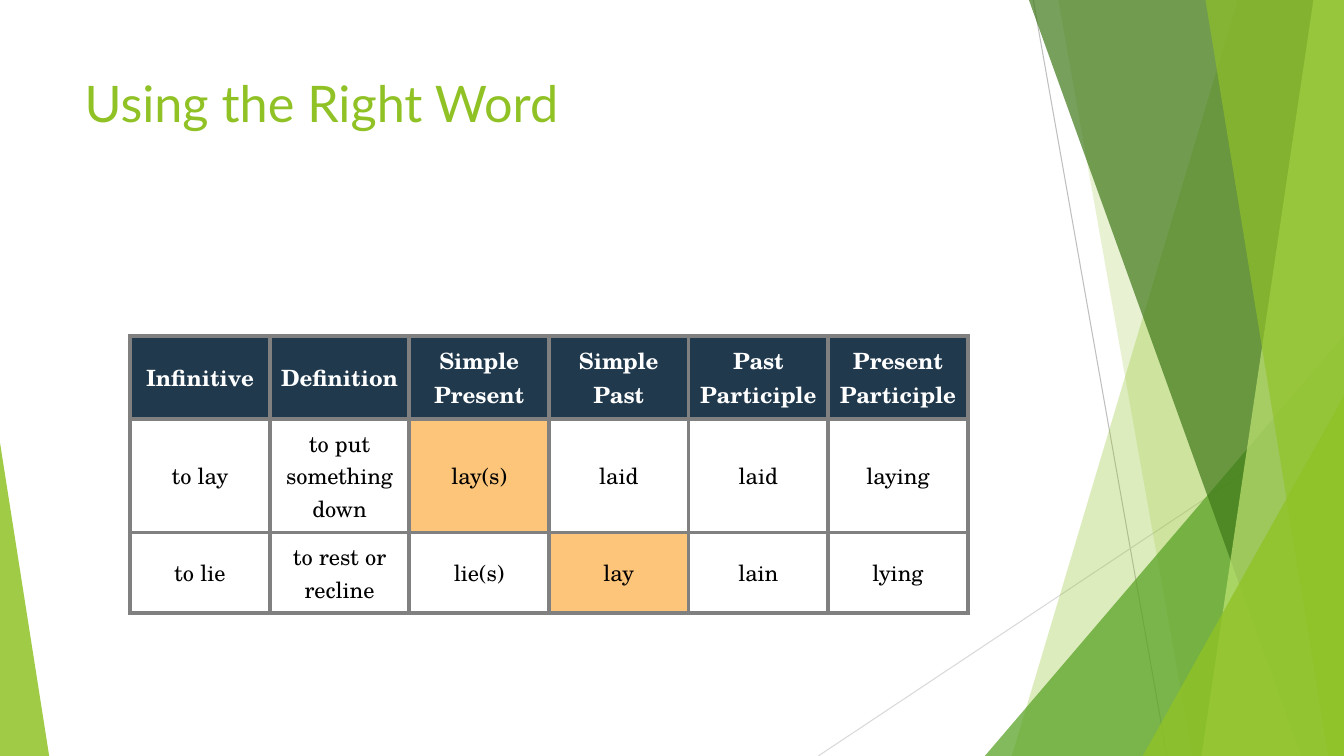
"""Build the slide on lay and lie: a verb table beside green slanted panels."""
from lxml.etree import SubElement
from pptx import Presentation
from pptx.dml.color import RGBColor
from pptx.enum.shapes import MSO_CONNECTOR, MSO_SHAPE
from pptx.enum.text import MSO_ANCHOR, PP_ALIGN
from pptx.oxml.ns import qn
from pptx.util import Cm, Pt

COLORS = {
    "lime": "90C226", "green": "54A021", "forest": "3F7819", "pale": "C0E474",
    "silver": "BFBFBF", "mist": "D9D9D9", "border": "808080", "navy": "20394D",
    "orange": "FDC57A", "white": "FFFFFF", "black": "000000",
}
WIDTH, HEIGHT = 33.87, 19.05


def write(frame, text, font, size, color, bold=False, align=PP_ALIGN.LEFT, anchor=MSO_ANCHOR.TOP):
    frame.word_wrap = True
    frame.vertical_anchor = anchor
    paragraph = frame.paragraphs[0]
    paragraph.alignment = align
    run = paragraph.add_run()
    run.text = text
    run.font.name, run.font.size, run.font.bold = font, Pt(size), bold
    run.font.color.rgb = RGBColor.from_string(COLORS[color])


def tint(panel, color, opacity):
    panel.shadow.inherit = False
    panel.line.fill.background()
    panel.fill.solid()
    panel.fill.fore_color.rgb = RGBColor.from_string(COLORS[color])
    rgb = panel.element.spPr.find(qn("a:solidFill")).find(qn("a:srgbClr"))
    SubElement(rgb, qn("a:alpha")).set("val", str(opacity * 1000))


presentation = Presentation()
presentation.slide_width, presentation.slide_height = Cm(WIDTH), Cm(HEIGHT)
slide = presentation.slides.add_slide(presentation.slide_layouts[5])
shapes = slide.shapes

for x1, y1, x2, y2, color in [
    (26.04, 0, 29.41, HEIGHT, "silver"),
    (WIDTH, 10.24, 20.62, HEIGHT, "mist"),
]:
    ray = shapes.add_connector(MSO_CONNECTOR.STRAIGHT, Cm(x1), Cm(y1), Cm(x2), Cm(y2))
    ray.line.color.rgb = RGBColor.from_string(COLORS[color])
    ray.line.width = Pt(0.75)
    SubElement(ray.element.spPr, qn("a:effectLst"))

panels = [
    ("slant", 31.19, 25.5, "lime", 30),
    ("slant", 26.67, 30.05, "lime", 20),
    ("corner", 24.82, 8.46, "green", 72),
    ("slant", 25.93, 32.79, "forest", 70),
    ("slant", 33.1, 30.28, "pale", 70),
    ("slant", 30.38, 33.48, "lime", 65),
    ("corner", 28.8, 9.98, "lime", 80),
]
for form, start, end, color, opacity in panels:
    if form == "slant":
        outline = shapes.build_freeform(Cm(start), 0)
        outline.add_line_segments(
            [(Cm(WIDTH), 0), (Cm(WIDTH), Cm(HEIGHT)), (Cm(end), Cm(HEIGHT))], close=True)
        panel = outline.convert_to_shape()
    else:
        panel = shapes.add_shape(MSO_SHAPE.ISOSCELES_TRIANGLE, Cm(start), Cm(end),
                                 Cm(WIDTH - start), Cm(HEIGHT - end))
        panel.adjustments[0] = 1
    tint(panel, color, opacity)

left_wedge = shapes.add_shape(MSO_SHAPE.ISOSCELES_TRIANGLE, 0, Cm(11.15), Cm(1.24), Cm(7.9))
left_wedge.adjustments[0] = 0
tint(left_wedge, "lime", 85)

title = shapes.title
title.left, title.top, title.width, title.height = Cm(1.88), Cm(1.7), Cm(23.88), Cm(3.66)
write(title.text_frame, "Using the Right Word", font="Lato", size=36, color="lime")

verb_rows = [
    ["Infinitive", "Definition", "Simple Present", "Simple Past", "Past Participle", "Present Participle"],
    ["to lay", "to put something down", "lay(s)", "laid", "laid", "laying"],
    ["to lie", "to rest or recline", "lie(s)", "lay", "lain", "lying"],
]
highlighted = {(1, 2), (2, 3)}
row_heights = [2.1, 2.86, 2.02]
verbs = shapes.add_table(3, 6, Cm(3.28), Cm(8.46), Cm(21.11), Cm(sum(row_heights))).table
verbs.first_row = verbs.horz_banding = False
for row, height in zip(verbs.rows, row_heights):
    row.height = Cm(height)

for r, words in enumerate(verb_rows):
    header = r == 0
    for c, word in enumerate(words):
        cell = verbs.cell(r, c)
        cell.margin_left = cell.margin_right = cell.margin_top = cell.margin_bottom = Cm(0.18)
        write(cell.text_frame, word, font="TeX Gyre Schola", size=16, bold=header,
              color="white" if header else "black", align=PP_ALIGN.CENTER)
        cell.vertical_anchor = MSO_ANCHOR.MIDDLE
        properties = cell._tc.get_or_add_tcPr()
        for side in ("lnL", "lnR", "lnT", "lnB"):
            edge = SubElement(properties, qn(f"a:{side}"), w=str(Pt(3)))
            SubElement(SubElement(edge, qn("a:solidFill")), qn("a:srgbClr"), val=COLORS["border"])
        background = "navy" if header else "orange" if (r, c) in highlighted else "white"
        cell.fill.solid()
        cell.fill.fore_color.rgb = RGBColor.from_string(COLORS[background])

presentation.save("out.pptx")
